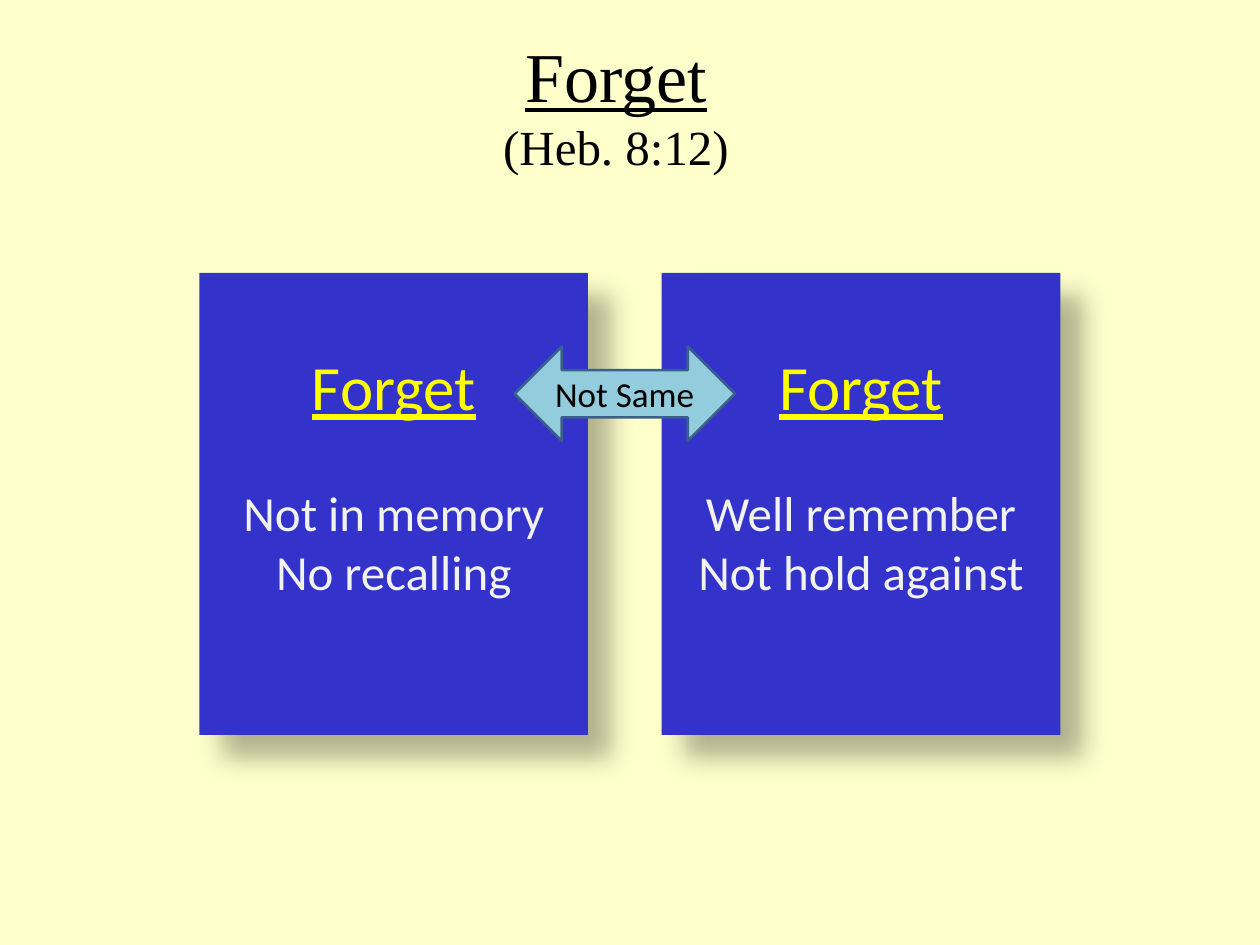
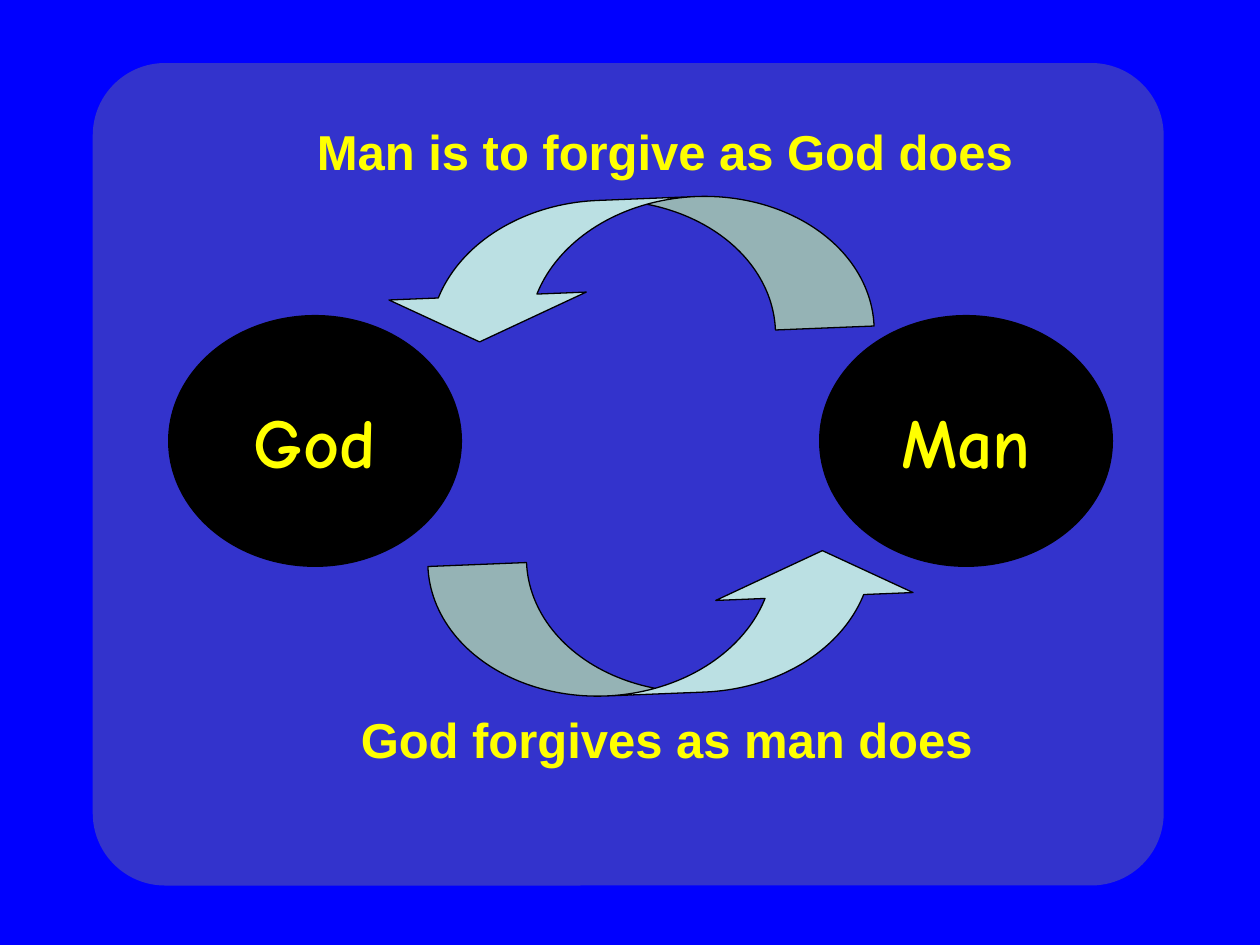
from lxml import etree
from pptx import Presentation
from pptx.dml.color import RGBColor
from pptx.enum.shapes import MSO_SHAPE
from pptx.enum.text import MSO_ANCHOR, PP_ALIGN
from pptx.oxml.ns import qn
from pptx.util import Pt

RECT, OVAL, ROUND = MSO_SHAPE.RECTANGLE, MSO_SHAPE.OVAL, MSO_SHAPE.ROUNDED_RECTANGLE
DOUBLE, CURVED = MSO_SHAPE.LEFT_RIGHT_ARROW, MSO_SHAPE.CURVED_RIGHT_ARROW
TOP, MIDDLE = MSO_ANCHOR.TOP, MSO_ANCHOR.MIDDLE
CENTER = PP_ALIGN.CENTER

CREAM = RGBColor(0xFF, 0xFF, 0xCC)
BLUE = RGBColor(0x00, 0x00, 0xFF)
INDIGO = RGBColor(0x33, 0x33, 0xCC)
YELLOW = RGBColor(0xFF, 0xFF, 0x00)
WHITE = RGBColor(0xF2, 0xF2, 0xEF)
BLACK = RGBColor(0x00, 0x00, 0x00)
SKY = RGBColor(0x93, 0xCD, 0xDD)
STEEL = RGBColor(0x3A, 0x5F, 0x8C)
PALE = RGBColor(0xBB, 0xE0, 0xE3)

TITLE_ONLY, BLANK = 5, 6
BODY_GAP = 34


def add_slide(prs, layout, color):
    slide = prs.slides.add_slide(prs.slide_layouts[layout])
    slide.background.fill.solid()
    slide.background.fill.fore_color.rgb = color
    return slide


def place(shape, left, top, width, height):
    shape.left, shape.top = Pt(left), Pt(top)
    shape.width, shape.height = Pt(width), Pt(height)


def write(frame, text, size, font, color, bold=False, underline=False, before=0):
    """Add a centred paragraph, using the first one while it is empty."""
    para = frame.paragraphs[0]
    if para.runs:
        para = frame.add_paragraph()
    para.alignment = CENTER
    para.space_before = Pt(before)
    run = para.add_run()
    run.text = text
    style = run.font
    style.size, style.name, style.bold, style.underline = Pt(size), font, bold, underline
    style.color.rgb = color


def add_shape(slide, kind, box, fill, line=None, weight=0.75, adjust=()):
    shape = slide.shapes.add_shape(kind, *map(Pt, box))
    shape.shadow.inherit = False
    shape.fill.solid()
    shape.fill.fore_color.rgb = fill
    if line is None:
        shape.line.fill.background()
    else:
        shape.line.color.rgb = line
        shape.line.width = Pt(weight)
    for index, value in enumerate(adjust):
        shape.adjustments[index] = value
    shape.text_frame.vertical_anchor = MIDDLE
    return shape


def drop_shadow(shape):
    effects = shape.fill._xPr.find(qn("a:effectLst"))
    outer = etree.SubElement(effects, qn("a:outerShdw"), blurRad=str(Pt(15)),
                             dist=str(Pt(18)), dir="2700000", algn="tl", rotWithShape="0")
    color = etree.SubElement(outer, qn("a:srgbClr"), val=str(BLACK))
    etree.SubElement(color, qn("a:alpha"), val="30000")


def add_title(slide, head, verse):
    title = slide.shapes.title
    place(title, 115, 15, 474, 90)
    frame = title.text_frame
    frame.vertical_anchor = TOP
    write(frame, head, 40, "Times New Roman", BLACK, underline=True)
    write(frame, verse, 28, "Times New Roman", BLACK)


def add_card(slide, left, width, head, lines):
    card = add_shape(slide, RECT, (left, 156, width, 264), INDIGO)
    drop_shadow(card)
    frame = card.text_frame
    frame.margin_bottom = Pt(3.6 + BODY_GAP)
    write(frame, head, 36, "Calibri", YELLOW, underline=True)
    for index, line in enumerate(lines):
        write(frame, line, 28, "Calibri", WHITE, before=0 if index else BODY_GAP)


def add_actor(slide, left, name):
    oval = add_shape(slide, OVAL, (left, 180, 168, 144), BLACK)
    oval.text_frame.word_wrap = False
    write(oval.text_frame, name, 40, "Comic Neue", YELLOW, bold=True)


def add_claim(slide, box, text):
    frame = slide.shapes.add_textbox(*map(Pt, box)).text_frame
    frame.word_wrap = True
    write(frame, text, 28, "Arial", YELLOW, bold=True)


def add_turn(slide, left, top, angle):
    turn = add_shape(slide, CURVED, (left, top, 78, 282), PALE, BLACK,
                     adjust=(0.723, 1.446, 0.333))
    turn.rotation = angle


def forget_slide(prs):
    slide = add_slide(prs, TITLE_ONLY, CREAM)
    add_title(slide, "Forget", "(Heb. 8:12)")
    add_card(slide, 114, 222, "Forget", ("Not in memory", "No recalling"))
    add_card(slide, 378, 228, "Forget", ("Well remember", "Not hold against"))
    arrow = add_shape(slide, DOUBLE, (294, 198, 126, 54), SKY, STEEL, 1.5)
    arrow.text_frame.word_wrap = True
    write(arrow.text_frame, "Not Same", 20, "Calibri", BLACK)


def forgive_slide(prs):
    slide = add_slide(prs, BLANK, BLUE)
    add_shape(slide, ROUND, (53, 36, 612, 470), INDIGO, adjust=(0.088,))
    add_actor(slide, 96, "God")
    add_actor(slide, 468, "Man")
    add_turn(slide, 318, 12, 87.7)
    add_claim(slide, (167, 66, 426, 41), "Man is to forgive as God does")
    add_turn(slide, 348, 216, 87.7 + 180)
    add_claim(slide, (186, 402, 390, 41), "God forgives as man does")


def main():
    prs = Presentation()
    prs.slide_width, prs.slide_height = Pt(720), Pt(540)
    forget_slide(prs)
    forgive_slide(prs)
    prs.save("out.pptx")


if __name__ == "__main__":
    main()
